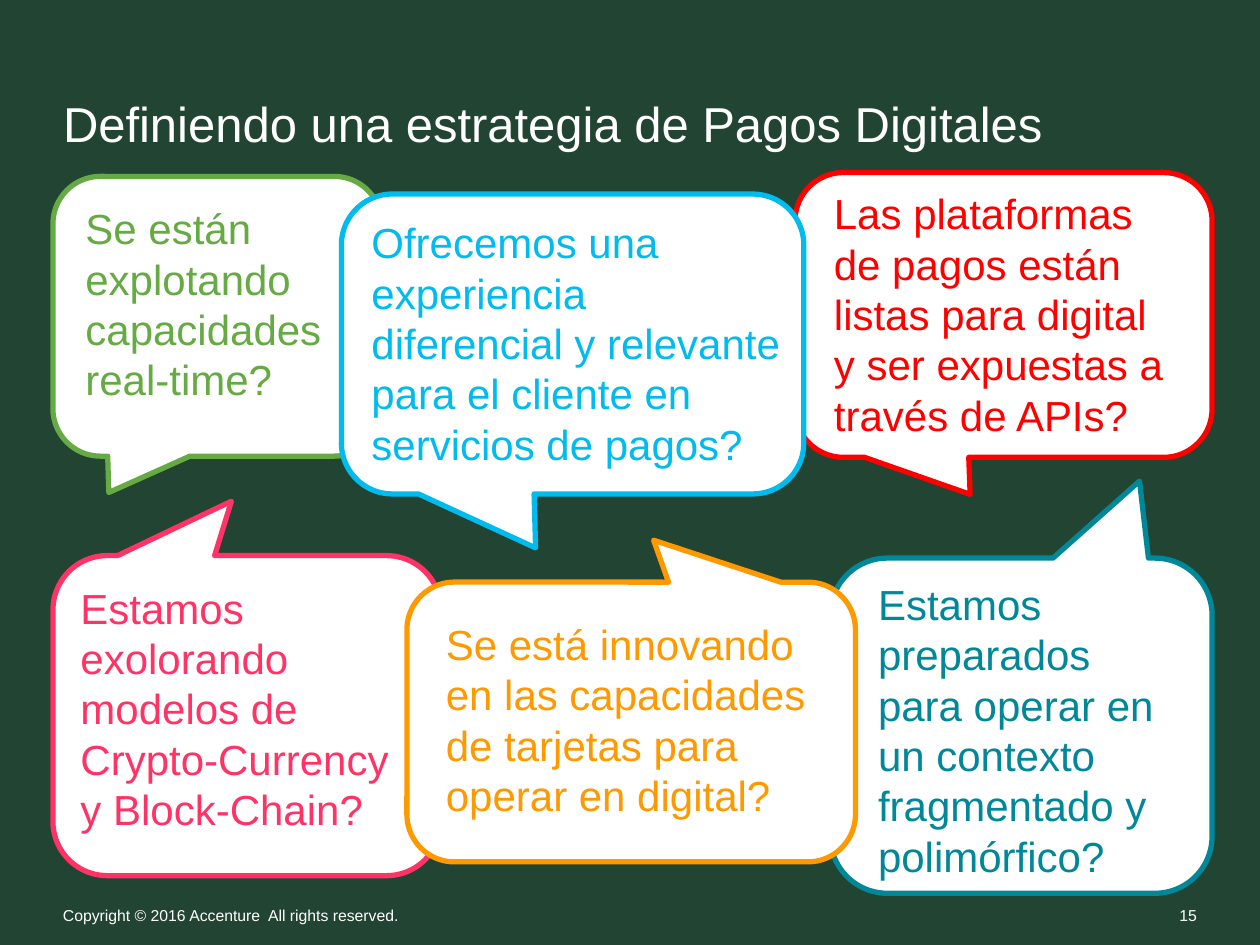
from pptx import Presentation
from pptx import util as u
from pptx.dml.color import RGBColor
from pptx.enum import shapes, text

COLORS = {
    "background": "224433", "white": "FFFFFF", "green": "66AA44", "teal": "008899",
    "red": "FF0000", "pink": "FF3366", "blue": "00BBEE", "orange": "FF9900",
}
SLIDE_WIDTH, SLIDE_HEIGHT = 10, 7.5
MARGIN = 0.05 * SLIDE_WIDTH
FOOTER_TOP, FOOTER_HEIGHT = 7.19, 0.14

TITLE = "Definiendo una estrategia de Pagos Digitales"
COPYRIGHT = "Copyright © 2016 Accenture  All rights reserved."
PAGE_NUMBER = "15"

# Back to front: colour, question, bubble box, tail tip (shares of bubble from its centre), text box
BUBBLES = [
    ("green", "Se están explotando capacidades real-time?",
     (0.42, 1.4, 2.61, 2.22), (-0.33, 0.63), (0.58, 1.56, 2.14, 2.12)),
    ("teal", "Estamos preparados para operar en un contexto fragmentado y polimórfico?",
     (6.59, 4.43, 3.03, 2.66), (0.31, -0.73), (6.87, 4.54, 2.59, 2.52)),
    ("red", "Las plataformas de pagos están listas para digital y ser expuestas a través de APIs?",
     (6.31, 1.37, 3.31, 2.26), (-0.08, 0.63), (6.52, 1.44, 2.88, 2.12)),
    ("pink", "Estamos exolorando modelos de Crypto-Currency y Block-Chain?",
     (0.42, 4.41, 3.08, 2.54), (-0.04, -0.67), (0.54, 4.57, 2.75, 2.12)),
    ("blue", "Ofrecemos una experiencia diferencial y relevante para el cliente en servicios de pagos?",
     (2.71, 1.54, 3.67, 2.38), (-0.08, 0.68), (2.85, 1.67, 3.46, 2.12)),
    ("orange", "Se está innovando en las capacidades de tarjetas para operar en digital?",
     (3.23, 4.62, 3.56, 2.22), (0.05, -0.65), (3.44, 4.86, 3.08, 1.72)),
]


def color(name):
    return RGBColor.from_string(COLORS[name])


def inches(box):
    return [u.Inches(length) for length in box]


def write(shape, words, size, ink, align=text.PP_ALIGN.LEFT, **frame_format):
    frame = shape.text_frame
    frame.word_wrap = True
    for name, value in frame_format.items():
        setattr(frame, name, value)
    para = frame.paragraphs[0]
    para.alignment = align
    span = para.add_run()
    span.text = words
    for name, value in {"name": "Arial", "size": u.Pt(size)}.items():
        setattr(span.font, name, value)
    span.font.color.rgb = color(ink)


def add_bubble(page, ink, question, bubble_box, tail, text_box):
    group = page.shapes.add_group_shape()
    bubble = group.shapes.add_shape(
        shapes.MSO_SHAPE.ROUNDED_RECTANGULAR_CALLOUT, *inches(bubble_box))
    bubble.shadow.inherit = False
    for index, value in enumerate((*tail, 0.17)):
        bubble.adjustments[index] = value
    bubble.fill.solid()
    bubble.fill.fore_color.rgb = color("white")
    bubble.line.color.rgb = color(ink)
    bubble.line.width = u.Pt(3)
    write(group.shapes.add_textbox(*inches(text_box)), question, 24, ink)


def main():
    deck = Presentation()
    deck.slide_width, deck.slide_height = inches((SLIDE_WIDTH, SLIDE_HEIGHT))
    page = deck.slides.add_slide(deck.slide_layouts[5])
    page.background.fill.solid()
    page.background.fill.fore_color.rgb = color("background")

    title = page.shapes.title
    title.left, title.top, title.width, title.height = inches(
        (MARGIN, 0.61, SLIDE_WIDTH - 2 * MARGIN, 0.6))
    write(title, TITLE, 28, "white", vertical_anchor=text.MSO_ANCHOR.BOTTOM,
          auto_size=text.MSO_AUTO_SIZE.NONE,
          margin_left=0, margin_right=0, margin_top=0, margin_bottom=0)

    footers = [
        (PAGE_NUMBER, SLIDE_WIDTH - MARGIN - 0.6, 0.6, text.PP_ALIGN.RIGHT, "margin_right"),
        (COPYRIGHT, MARGIN, 4.44, text.PP_ALIGN.LEFT, "margin_left"),
    ]
    for words, left, width, align, flush_margin in footers:
        box = page.shapes.add_textbox(*inches((left, FOOTER_TOP, width, FOOTER_HEIGHT)))
        write(box, words, 9, "white", align,
              vertical_anchor=text.MSO_ANCHOR.MIDDLE, **{flush_margin: 0})

    for bubble in BUBBLES:
        add_bubble(page, *bubble)
    deck.save("out.pptx")


if __name__ == "__main__":
    main()
